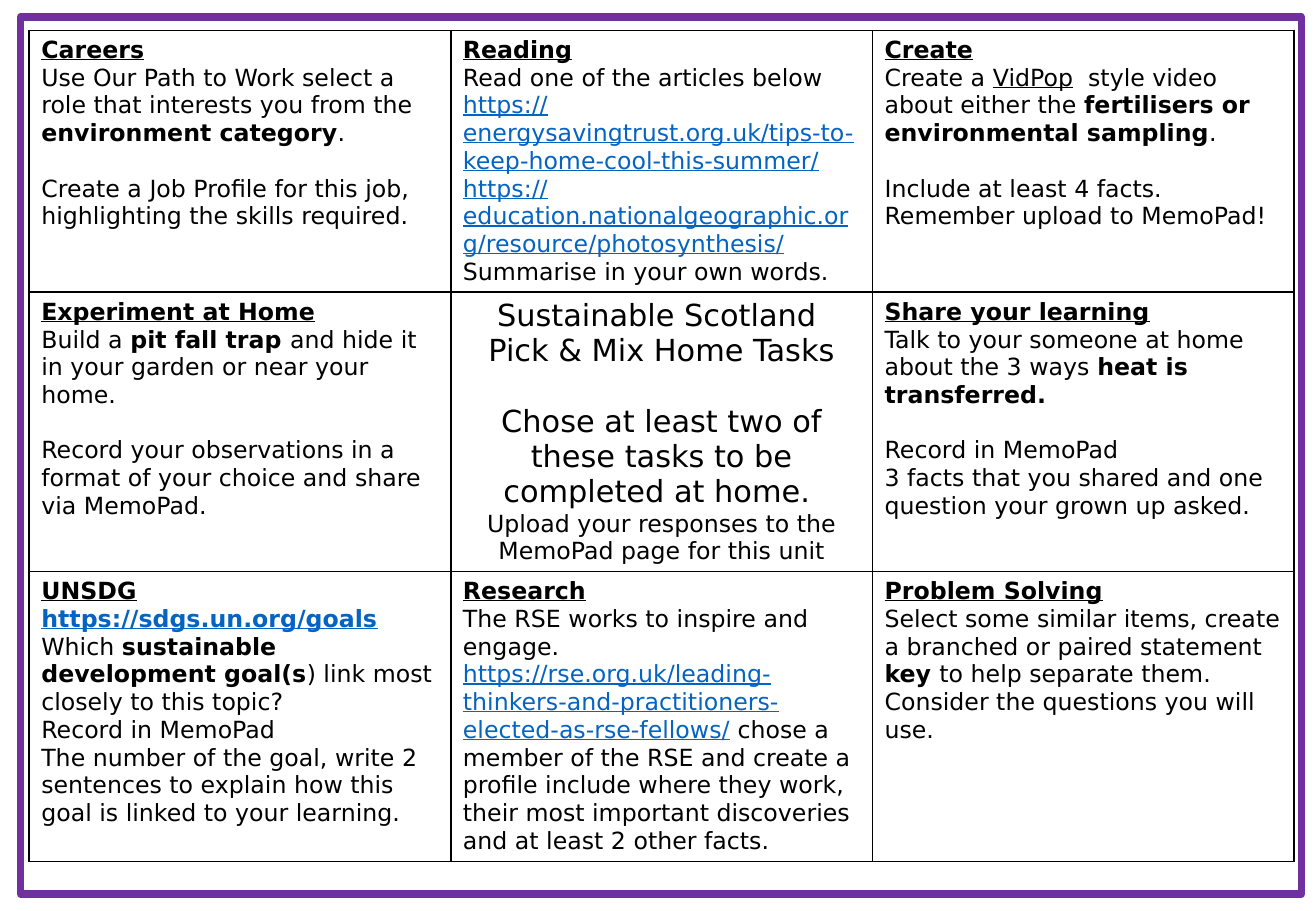
from lxml.etree import SubElement
from pptx import Presentation
from pptx.dml.color import RGBColor
from pptx.enum.shapes import MSO_SHAPE as Preset
from pptx.enum.text import PP_ALIGN as Align
from pptx.oxml import parse_xml
from pptx.oxml.ns import nsdecls, qn
from pptx.util import Inches, Pt

COLOURS = {"text": "000000", "link": "0563C1", "grid": "000000", "frame": "7030A0"}
FONT = "DejaVu Sans"
BODY_SIZE, CENTRE_SIZE = 14, 18
LINE_HEIGHT = 1.17
COLUMNS = ROWS = 3
CENTRE = (1, 1)

# Run styles: b bold, u underlined, l link colour. A paragraph opening with GAP stands one line lower.
GAP = "gap"
TASKS = [
    [
        [
            [("Careers", "bu")],
            [("Use Our Path to Work select a role that interests you from the ", ""),
             ("environment category", "b"), (".", "")],
            [GAP, ("Create a Job Profile for this job, highlighting the skills required.", "")],
        ],
        [
            [("Reading", "bu")],
            [("Read one of the articles below", "")],
            [("https://energysavingtrust.org.uk/tips-to-keep-home-cool-this-summer/", "ul")],
            [("https://education.nationalgeographic.org/resource/photosynthesis/", "ul")],
            [("Summarise in your own words.", "")],
        ],
        [
            [("Create", "bu")],
            [("Create a ", ""), ("VidPop", "u"), ("  style video about either the ", ""),
             ("fertilisers or environmental sampling", "b"), (".", "")],
            [GAP, ("Include at least 4 facts.", "")],
            [("Remember upload to MemoPad!", "")],
        ],
    ],
    [
        [
            [("Experiment at Home", "bu")],
            [("Build a ", ""), ("pit fall trap ", "b"),
             ("and hide it in your garden or near your home.", "")],
            [GAP, ("Record your observations in a format of your choice and share via MemoPad.", "")],
        ],
        [
            [("Sustainable Scotland ", "")],
            [("Pick & Mix Home Tasks", "")],
            [GAP, ("Chose at least two of these tasks to be completed at home. ", "")],
            [("Upload your responses to the MemoPad page for this unit", "")],
        ],
        [
            [("Share your learning", "bu")],
            [("Talk to your someone at home about the 3 ways ", ""), ("heat is transferred.", "b")],
            [GAP, ("Record in MemoPad", "")],
            [("3 facts that you shared and one question your grown up asked.", "")],
        ],
    ],
    [
        [
            [("UNSDG", "bu")],
            [("https://sdgs.un.org/goals", "bul")],
            [("Which ", ""), ("sustainable development goal(s", "b"),
             (") link most closely to this topic?", "")],
            [("Record in MemoPad", "")],
            [("The number of the goal, write 2 sentences to explain how this goal is linked "
              "to your learning.", "")],
        ],
        [
            [("Research", "bu")],
            [("The RSE works to inspire and engage.", "")],
            [("https://rse.org.uk/leading-thinkers-and-practitioners-elected-as-rse-fellows/", "ul"),
             (" chose a member of the RSE and create a profile include where they work, "
              "their most important discoveries and at least 2 other facts.", "")],
        ],
        [
            [("Problem Solving", "bu")],
            [("Select some similar items, create a branched or paired statement ", ""),
             ("key ", "b"),
             ("to help separate them. Consider the questions you will use.", "")],
        ],
    ],
]


def rgb(name):
    return RGBColor.from_string(COLOURS[name])


def write_paragraph(paragraph, parts, size, align):
    paragraph.alignment = align
    if parts[0] == GAP:
        paragraph.space_before = Pt(round(CENTRE_SIZE * LINE_HEIGHT, 1) if align == Align.CENTER
                                    else round(size * LINE_HEIGHT, 1))
        parts = parts[1:]
    for text, style in parts:
        run = paragraph.add_run()
        run.text = text
        font = run.font
        font.name, font.size = FONT, Pt(size)
        font.bold, font.underline = "b" in style, "u" in style
        font.color.rgb = rgb("link" if "l" in style else "text")


def outline_cell(cell):
    properties = cell._tc.get_or_add_tcPr()
    for index, side in enumerate(("lnL", "lnR", "lnT", "lnB")):
        line = parse_xml(f'<a:{side} {nsdecls("a")} w="{Pt(1)}"/>')
        fill = SubElement(line, qn("a:solidFill"))
        SubElement(fill, qn("a:srgbClr"), val=COLOURS["grid"])
        properties.insert(index, line)


def fill_cell(cell, paragraphs, is_centre):
    cell.fill.background()
    outline_cell(cell)
    align = Align.CENTER if is_centre else Align.LEFT
    for index, parts in enumerate(paragraphs):
        frame = cell.text_frame
        paragraph = frame.add_paragraph() if index else frame.paragraphs[0]
        is_last = index == len(paragraphs) - 1
        size = CENTRE_SIZE if is_centre and not is_last else BODY_SIZE
        write_paragraph(paragraph, parts, size, align)


def add_task_grid(slide, left, top, width, height):
    table = slide.shapes.add_table(ROWS, COLUMNS, left, top, width, height).table
    table.first_row = table.horz_banding = False
    for row, tasks in enumerate(TASKS):
        for column, paragraphs in enumerate(tasks):
            fill_cell(table.cell(row, column), paragraphs, (row, column) == CENTRE)


def add_frame(slide, left, top, width, height):
    shape = slide.shapes.add_shape(Preset.RECTANGLE, left, top, width, height)
    shape.shadow.inherit = False
    shape.fill.background()
    shape.line.color.rgb = rgb("frame")
    shape.line.width = Pt(4.5)


def main():
    presentation = Presentation()
    presentation.slide_width, presentation.slide_height = Inches(10.83), Inches(7.5)
    slide = presentation.slides.add_slide(presentation.slide_layouts[6])
    add_task_grid(slide, Inches(0.24), Inches(0.25), Inches(10.41), Inches(5.67))
    add_frame(slide, Inches(0.17), Inches(0.14), Inches(10.54), Inches(7.22))
    presentation.save("out.pptx")


if __name__ == "__main__":
    main()
